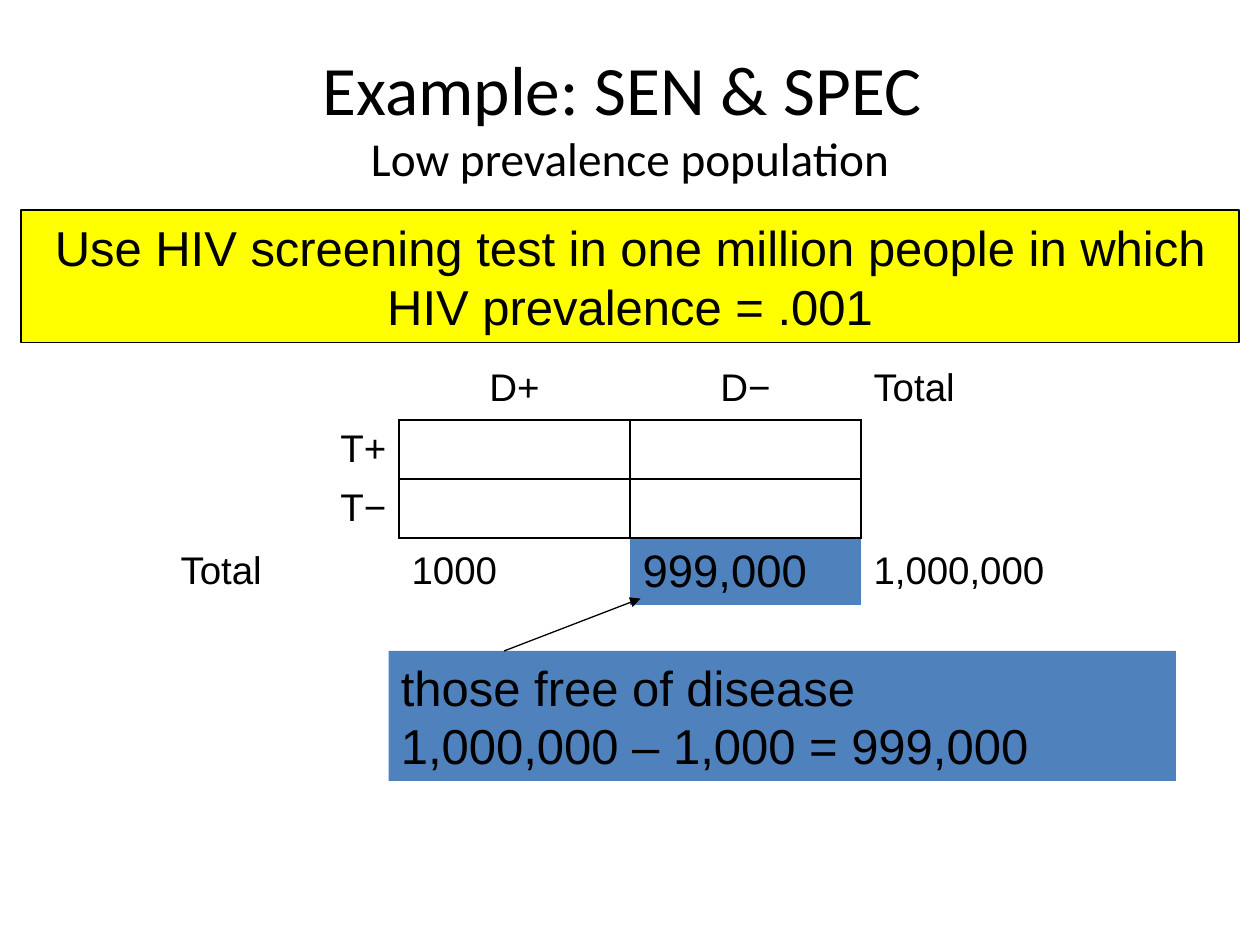
from pptx import Presentation
from pptx.dml.color import RGBColor
from pptx.enum import shapes, text
from pptx.oxml import parse_xml
from pptx.oxml import ns
from pptx.util import Pt

COLORS = {"ink": "000000", "paper": "FFFFFF", "note": "FFFF00", "mark": "4F81BD"}
LEFT, MID, RIGHT = text.PP_ALIGN.LEFT, text.PP_ALIGN.CENTER, text.PP_ALIGN.RIGHT


def color(name):
    return RGBColor.from_string(COLORS[name])


def write(frame, *parts, font="Arial", align=LEFT):
    """Fill a frame with (text, size) parts; a newline is a line break."""
    frame.word_wrap = True
    frame.auto_size = text.MSO_AUTO_SIZE.NONE
    frame.vertical_anchor = text.MSO_ANCHOR.MIDDLE
    para = frame.paragraphs[0]
    para.alignment = align
    for words, size in parts:
        for i, line in enumerate(words.split("\n")):
            if i:
                para.add_line_break()
            if not line:
                continue
            run = para.add_run()
            run.text = line
            run.font.name = font
            run.font.size = Pt(size)
            run.font.color.rgb = color("ink")


def place(item, box):
    item.left, item.top, item.width, item.height = map(Pt, box)


def head(slide, box):
    title = slide.shapes.title
    place(title, box)
    write(title.text_frame, ("Example: SEN & SPEC \n", 39.6),
          ("Low prevalence population", 27), font="Calibri", align=MID)


def panel(slide, box, words, fill, align=LEFT, line=None):
    rect = slide.shapes.add_shape(shapes.MSO_SHAPE.RECTANGLE, *map(Pt, box))
    rect.shadow.inherit = False
    rect.fill.solid()
    rect.fill.fore_color.rgb = color(fill)
    if line:
        rect.line.color.rgb = color(line)
        rect.line.width = Pt(0.75)
    else:
        rect.line.fill.background()
    write(rect.text_frame, (words, 28), align=align)


def edge(cell, side, shown):
    """Draw or hide one border of a cell."""
    fill = (f'<a:solidFill><a:srgbClr val="{COLORS["ink"]}"/></a:solidFill>'
            if shown else "<a:noFill/>")
    cell._tc.get_or_add_tcPr().append(parse_xml(
        f'<a:ln{side} {ns.nsdecls("a")} w="{Pt(1)}">{fill}</a:ln{side}>'))


def grid(slide, box):
    rows = [["", "D+", "D−", "Total"],
            ["T+", "", "", ""],
            ["T−", "", "", ""],
            ["Total", "1000", "999,000", "1,000,000"]]
    aligns = {"D+": MID, "D−": MID, "T+": RIGHT, "T−": RIGHT}
    fills = {"1000": "paper", "999,000": "mark"}
    steps = {"L": (0, -1), "R": (0, 1), "T": (-1, 0), "B": (1, 0)}
    table = slide.shapes.add_table(4, 4, *map(Pt, box)).table
    table.first_row = table.horz_banding = False
    for col in table.columns:
        col.width = Pt(box[2] / 4)
    for row, high in zip(table.rows, (36, 33.7, 33.7, 38.4)):
        row.height = Pt(high)

    def inner(r, c):
        return r in (1, 2) and c in (1, 2)

    for r, row in enumerate(rows):
        for c, words in enumerate(row):
            cell = table.cell(r, c)
            cell.vertical_anchor = text.MSO_ANCHOR.MIDDLE
            # A border shows wherever it touches the 2 by 2 core
            for side, (down, over) in steps.items():
                edge(cell, side, inner(r, c) or inner(r + down, c + over))
            if words in fills:
                cell.fill.solid()
                cell.fill.fore_color.rgb = color(fills[words])
            else:
                cell.fill.background()
            if words:
                size = 26 if words == "999,000" else 22
                para = cell.text_frame.paragraphs[0]
                para.alignment = aligns.get(words, LEFT)
                run = para.add_run()
                run.text = words
                run.font.name = "Arial"
                run.font.size = Pt(size)
                run.font.color.rgb = color("ink")


def arrow(slide, start, end):
    line = slide.shapes.add_connector(
        shapes.MSO_CONNECTOR.STRAIGHT, *map(Pt, start + end))
    line.line.color.rgb = color("ink")
    line.line.width = Pt(0.75)
    line.line._get_or_add_ln().append(
        parse_xml(f'<a:tailEnd {ns.nsdecls("a")} type="triangle"/>'))
    line._element.spPr.append(parse_xml(f'<a:effectLst {ns.nsdecls("a")}/>'))


def main():
    deck = Presentation()
    deck.slide_width, deck.slide_height = Pt(720), Pt(540)
    slide = deck.slides.add_slide(deck.slide_layouts[5])
    # Heading
    head(slide, (36, 21.6, 648, 90))
    # Two-way table
    grid(slide, (96, 204, 528, 141.8))
    # Task and explanation
    panel(slide, (12, 120, 696, 75.6),
          "Use HIV screening test in one million people in which HIV prevalence = .001",
          "note", align=MID, line="ink")
    panel(slide, (222, 372, 450, 74.2),
          "those free of disease\n1,000,000 – 1,000 = 999,000", "mark")
    # Pointer to the disease-free total
    arrow(slide, (288, 372), (366, 342))
    deck.save("out.pptx")


if __name__ == "__main__":
    main()
